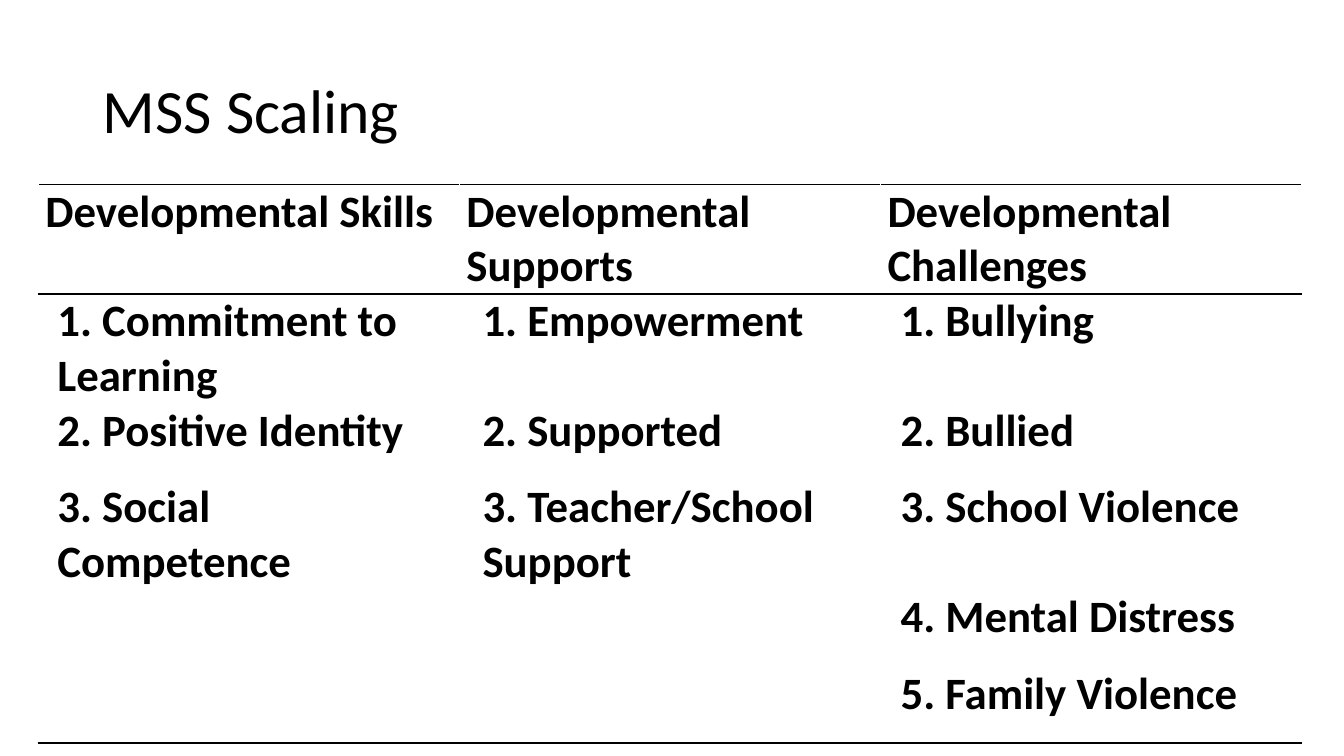
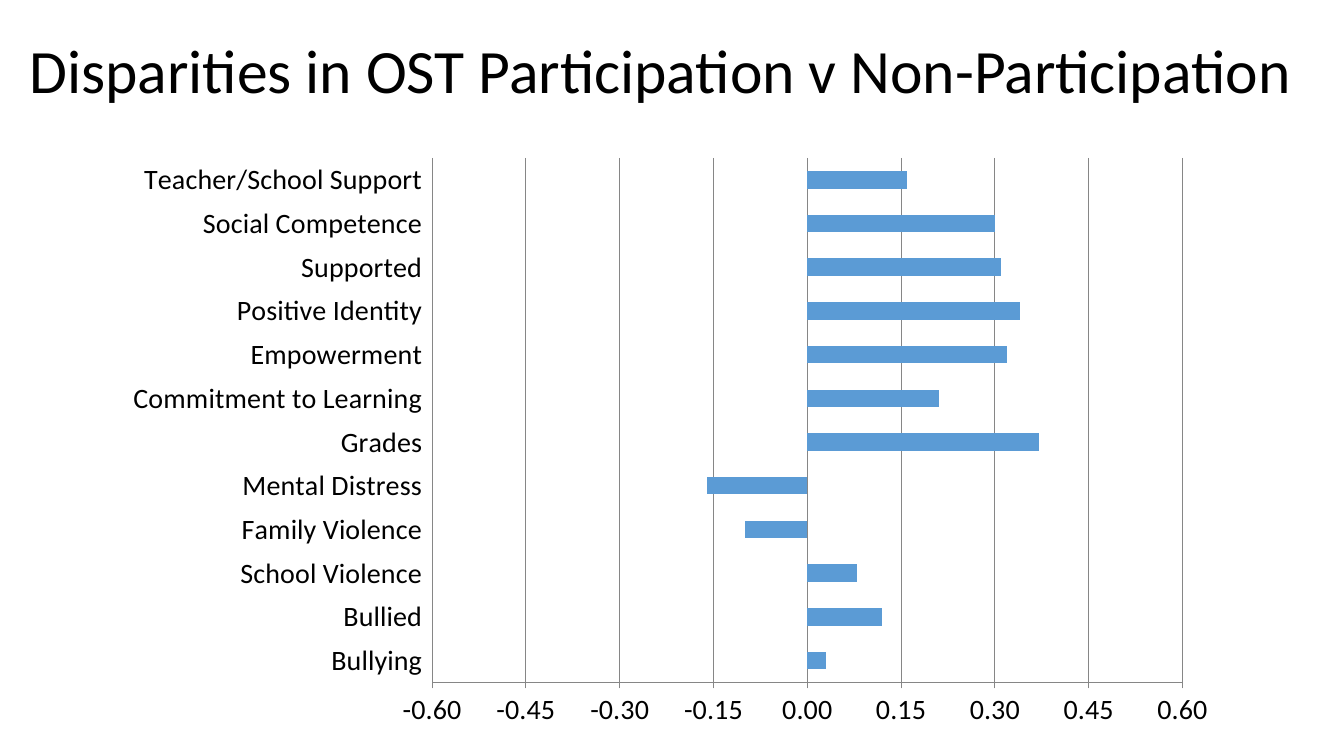
from dataclasses import dataclass
from itertools import product

from lxml.etree import SubElement as Sub
from pptx import Presentation
from pptx.chart.data import CategoryChartData as ChartData
from pptx.dml.color import RGBColor as RGB
from pptx.enum.chart import XL_CHART_TYPE as Kind
from pptx.enum.chart import XL_TICK_LABEL_POSITION as Place
from pptx.enum.chart import XL_TICK_MARK as Tick
from pptx.enum.text import MSO_ANCHOR as Anchor
from pptx.enum.text import MSO_AUTO_SIZE as Fit
from pptx.enum.text import PP_ALIGN as Align
from pptx.oxml.ns import qn
from pptx.util import Inches, Pt


@dataclass(frozen=True)
class Theme:
    font: str = "Calibri"
    ink: str = "000000"
    paper: str = "FFFFFF"
    bar: str = "5B9BD5"
    grid: str = "868686"
    title: int = 44
    cell: int = 32
    axis: int = 20


THEME = Theme()

HEADS = ["Developmental Skills", "Developmental Supports", "Developmental Challenges"]
LISTS = [
    ["Commitment to Learning", "Positive Identity", "Social Competence"],
    ["Empowerment", "Supported", "Teacher/School Support"],
    ["Bullying", "Bullied", "School Violence", "Mental Distress", "Family Violence"],
]
INDENTS = [0.12, 0.16, 0.13]

GAPS = {
    "Bullying": 0.03,
    "Bullied": 0.12,
    "School Violence": 0.08,
    "Family Violence": -0.1,
    "Mental Distress": -0.16,
    "Grades": 0.37,
    "Commitment to Learning": 0.21,
    "Empowerment": 0.32,
    "Positive Identity": 0.34,
    "Supported": 0.31,
    "Social Competence": 0.3,
    "Teacher/School Support": 0.16,
}


def style(font, size, bold=False):
    font.name = THEME.font
    font.size = Pt(size)
    font.bold = bold
    font.color.rgb = RGB.from_string(THEME.ink)


def add_run(para, text, size, bold=False):
    run = para.add_run()
    run.text = text
    style(run.font, size, bold)


def add_slide(deck, title, box):
    """Add a slide whose title placeholder fills the given box."""
    slide = deck.slides.add_slide(deck.slide_layouts.get_by_name("Title Only"))
    shape = slide.shapes.title
    shape.left, shape.top, shape.width, shape.height = map(Inches, box)
    frame = shape.text_frame
    frame.word_wrap = True
    frame.auto_size = Fit.NONE
    frame.vertical_anchor = Anchor.MIDDLE
    para = frame.paragraphs[0]
    para.alignment = Align.LEFT
    para.line_spacing = 0.9
    add_run(para, title, THEME.title)
    return slide


def set_edges(cell, top, base):
    """Draw the four cell borders; the sides blend into the paper."""
    props = cell._tc.get_or_add_tcPr()
    sides = {"L": THEME.paper, "R": THEME.paper, "T": top, "B": base}
    for spot, (side, tint) in enumerate(sides.items()):
        line = Sub(props, qn(f"a:ln{side}"), w=str(Pt(1)))
        Sub(Sub(line, qn("a:solidFill")), qn("a:srgbClr"), val=tint)
        props.insert(spot, line)


def fill_cell(cell, text, indent):
    cell.fill.background()
    cell.margin_left = cell.margin_right = Inches(0.07)
    cell.margin_top = cell.margin_bottom = 0
    para = cell.text_frame.paragraphs[0]
    if indent:
        para._p.get_or_add_pPr().set("marL", str(Inches(indent)))
    if text:
        add_run(para, text, THEME.cell, True)


def add_scales(slide, box):
    """Add the table: one column per scale group, with a numbered list."""
    count = 1 + max(map(len, LISTS))
    table = slide.shapes.add_table(count, len(HEADS), *map(Inches, box)).table
    table.first_row = table.horz_banding = False
    for row in table.rows:
        row.height = Inches(0.76)
    for row, col in product(range(count), range(len(HEADS))):
        items = LISTS[col]
        if row == 0:
            text = HEADS[col]
        else:
            text = f"{row}. {items[row - 1]}" if row <= len(items) else ""
        cell = table.cell(row, col)
        fill_cell(cell, text, INDENTS[col] if row else 0)
        top = THEME.ink if row in (0, 1) else THEME.paper
        base = THEME.ink if row in (0, count - 1) else THEME.paper
        set_edges(cell, top, base)


def set_line(line):
    line.color.rgb = RGB.from_string(THEME.grid)
    line.width = Pt(0.75)


def add_bars(slide, box):
    data = ChartData(number_format="0.00")
    data.categories = list(GAPS)
    data.add_series("Series 1", list(GAPS.values()))
    chart = slide.shapes.add_chart(Kind.BAR_CLUSTERED, *map(Inches, box), data).chart
    chart.has_title = chart.has_legend = False
    style(chart.font, THEME.axis)

    plot = chart.plots[0]
    plot.gap_width = 150
    plot.vary_by_categories = False
    bars = plot.series[0]
    bars.invert_if_negative = False
    bars.format.fill.solid()
    bars.format.fill.fore_color.rgb = RGB.from_string(THEME.bar)

    names = chart.category_axis
    names.tick_label_position = Place.LOW
    names.major_tick_mark = Tick.NONE
    names.has_major_gridlines = False
    scale = chart.value_axis
    scale.minimum_scale, scale.maximum_scale = -0.6, 0.6
    scale.major_unit = 0.15
    scale.major_tick_mark = Tick.OUTSIDE
    scale.has_major_gridlines = True
    set_line(scale.major_gridlines.format.line)
    labels = scale.tick_labels
    labels.number_format = "###0.00"
    labels.number_format_is_linked = False
    for axis in (names, scale):
        axis.minor_tick_mark = Tick.NONE
        set_line(axis.format.line)


def main():
    deck = Presentation()
    deck.slide_width, deck.slide_height = Inches(13.33), Inches(7.5)
    slide = add_slide(deck, "MSS Scaling", (0.92, 0.4, 11.5, 1.45))
    add_scales(slide, (0.38, 1.83, 12.53, 4.56))
    title = "Disparities in OST Participation v Non-Participation"
    slide = add_slide(deck, title, (0.19, 0, 12.92, 1.45))
    add_bars(slide, (1.1, 1.45, 11.1, 5.88))
    deck.save("out.pptx")


if __name__ == "__main__":
    main()
